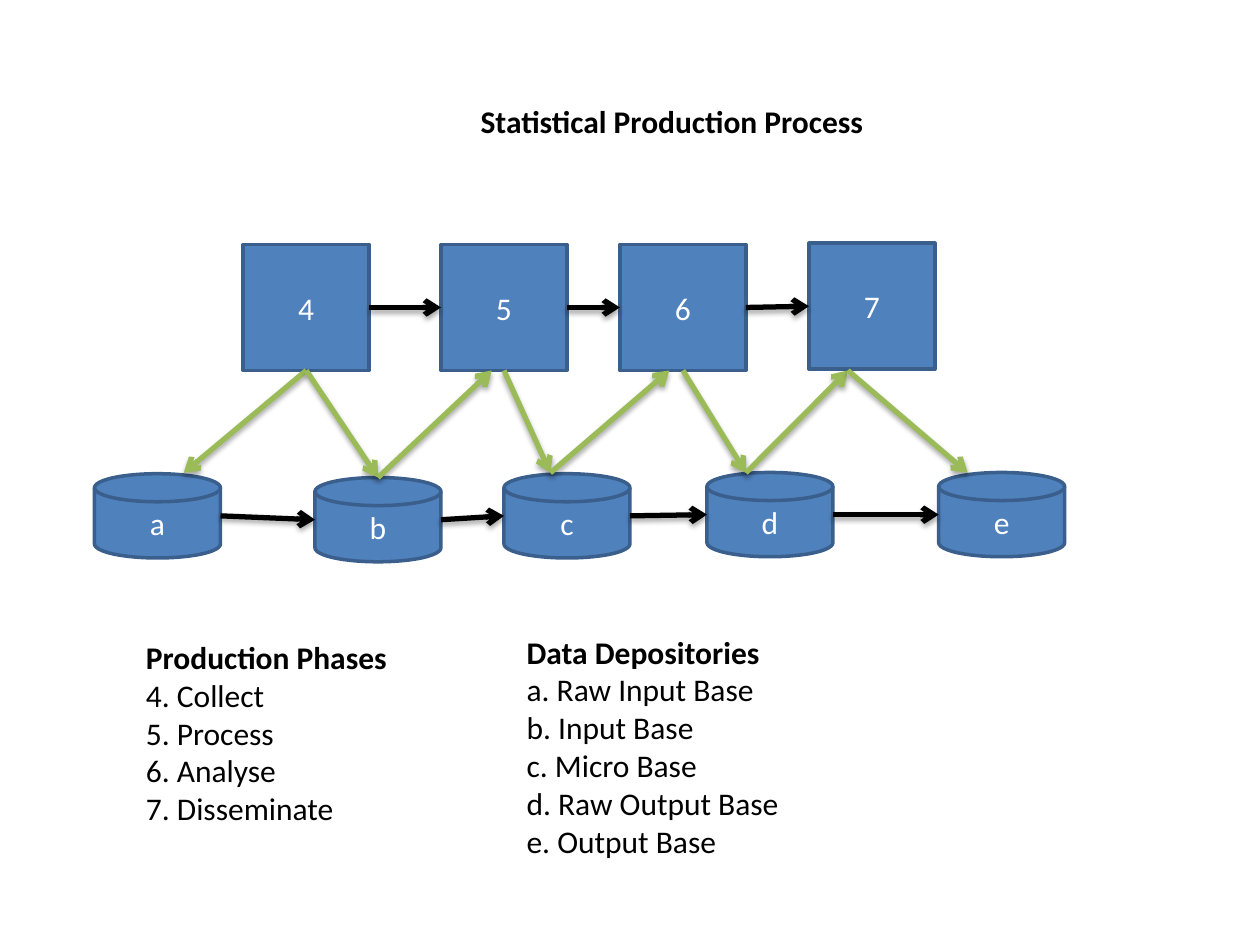
from itertools import pairwise

from lxml import etree
from pptx import Presentation
from pptx.dml.color import RGBColor
from pptx.enum.shapes import MSO_CONNECTOR, MSO_SHAPE
from pptx.enum.text import MSO_ANCHOR, MSO_AUTO_SIZE, PP_ALIGN
from pptx.oxml import parse_xml
from pptx.oxml.ns import nsdecls, qn
from pptx.util import Pt

SQUARE, DISK = MSO_SHAPE.RECTANGLE, MSO_SHAPE.FLOWCHART_MAGNETIC_DISK
STRAIGHT = MSO_CONNECTOR.STRAIGHT
LEFT, CENTER = PP_ALIGN.LEFT, PP_ALIGN.CENTER
MIDDLE = MSO_ANCHOR.MIDDLE
GROW = MSO_AUTO_SIZE.SHAPE_TO_FIT_TEXT

COLORS = {
    "node": "4F81BD",
    "edge": "3A5F8C",
    "flow": "000000",
    "exchange": "9BBB59",
    "text": "000000",
    "label": "FFFFFF",
}
FONT = "Calibri"
NODE_WIDTH = 72

# Label, left and top offset within the row
PHASES = [("4", 0, 0.7), ("5", 113, 0.7), ("6", 215.25, 0.7), ("7", 323.25, 0)]
DEPOSITORIES = [("a", 0, 0.7), ("b", 126, 2.9), ("c", 234, 0.7),
                ("d", 350, 0), ("e", 482.4, 0)]
# Start x, start y, end x, end y within the band between the rows
EXCHANGES = [
    (70, 0, 0, 58.5), (70, 0, 111, 61.2),
    (111, 61.2, 176, 0), (183, 0, 209.5, 58.5),
    (209.5, 58.5, 277.5, 0), (285.25, 0, 321.25, 58.5),
    (321.25, 58.5, 379.5, 0), (379.5, 0, 448, 58.5),
]


def color(name):
    return RGBColor.from_string(COLORS[name])


def write(para, text, *, ink="text", bold=False, align=LEFT):
    para.alignment = align
    span = para.add_run()
    span.text = text
    span.font.name = FONT
    span.font.size = Pt(18)
    span.font.bold = bold
    span.font.color.rgb = color(ink)


def add_arrow(page, start, end, ink):
    arrow = page.shapes.add_connector(STRAIGHT, *map(Pt, (*start, *end)))
    arrow.line.width = Pt(3)
    arrow.line.color.rgb = color(ink)
    head = etree.SubElement(arrow.line._get_or_add_ln(), qn("a:tailEnd"))
    head.set("type", "arrow")
    # Soft shadow straight below the line
    arrow._element.spPr.append(parse_xml(
        f'<a:effectLst {nsdecls("a")}>'
        f'<a:outerShdw blurRad="{Pt(3.1)}" dist="{Pt(1.8)}" dir="5400000" rotWithShape="0">'
        '<a:srgbClr val="000000"><a:alpha val="35000"/></a:srgbClr>'
        '</a:outerShdw></a:effectLst>'))


def add_row(page, left, top, height, kind, nodes):
    """Place a row of labelled nodes, each with an arrow to the next."""
    for label, x, y in nodes:
        node = page.shapes.add_shape(
            kind, Pt(left + x), Pt(top + y), Pt(NODE_WIDTH), Pt(height))
        node.shadow.inherit = False
        node.fill.solid()
        node.fill.fore_color.rgb = color("node")
        node.line.color.rgb = color("edge")
        node.line.width = Pt(2)
        node.text_frame.vertical_anchor = MIDDLE
        write(node.text_frame.paragraphs[0], label, ink="label", align=CENTER)
    for (_, x1, y1), (_, x2, y2) in pairwise(nodes):
        middle = top + height / 2
        add_arrow(page, (left + x1 + NODE_WIDTH, middle + y1),
                  (left + x2, middle + y2), "flow")


def add_exchanges(page, left, top):
    """Place the arrows between phases and depositories."""
    for x1, y1, x2, y2 in EXCHANGES:
        add_arrow(page, (left + x1, top + y1), (left + x2, top + y2), "exchange")


def add_text(page, left, top, width, height, heading, lines=(), align=LEFT):
    """Place a bold heading with plain lines below it."""
    box = page.shapes.add_textbox(*map(Pt, (left, top, width, height)))
    frame = box.text_frame
    frame.word_wrap = True
    frame.auto_size = GROW
    write(frame.paragraphs[0], heading, bold=True, align=align)
    for line in lines:
        write(frame.add_paragraph(), line, align=align)


def main():
    deck = Presentation()
    deck.slide_width, deck.slide_height = Pt(720), Pt(540)
    page = deck.slides.add_slide(deck.slide_layouts[6])

    # Process diagram
    add_row(page, 139, 139, 72, SQUARE, PHASES)
    add_row(page, 54, 270, 48.2, DISK, DEPOSITORIES)
    add_exchanges(page, 105, 211.7)

    # Title and legends
    add_text(page, 216, 54.7, 336, 29, "Statistical Production Process", align=CENTER)
    add_text(page, 76.3, 361, 283.7, 116.6, "Production Phases",
             ["4. Collect", "5. Process", "6. Analyse", "7. Disseminate"])
    add_text(page, 293.8, 358, 314, 138.2, "Data Depositories",
             ["a. Raw Input Base", "b. Input Base", "c. Micro Base",
              "d. Raw Output Base", "e. Output Base"])

    deck.save("out.pptx")


if __name__ == "__main__":
    main()
